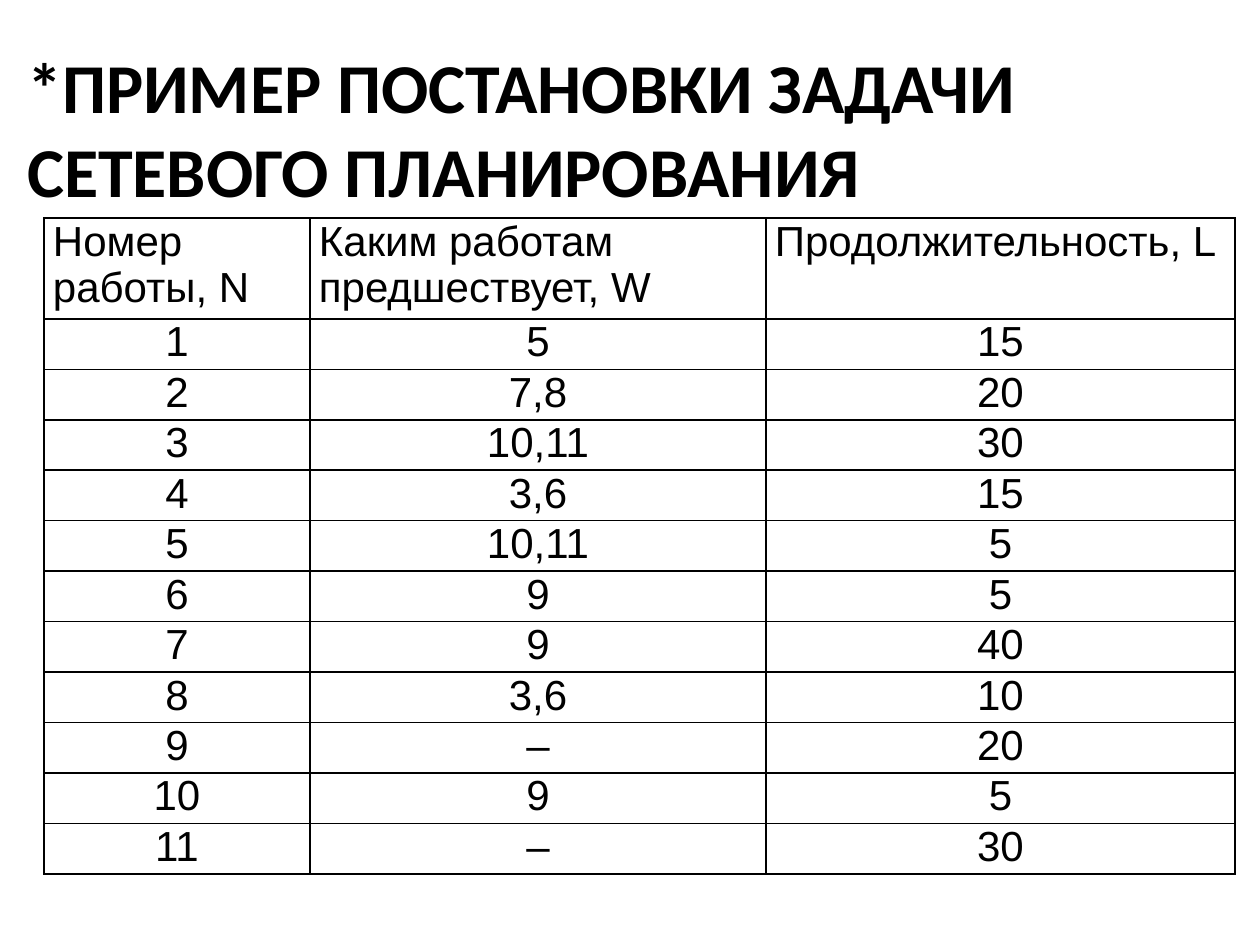
from pptx import Presentation
from pptx.dml.color import RGBColor
from pptx.enum.text import MSO_AUTO_SIZE, PP_ALIGN
from pptx.oxml import parse_xml
from pptx.oxml.ns import nsdecls
from pptx.util import Pt

SCALE = 914400 // 126
INK = "000000"
PAPER = "FFFFFF"
TITLE = "*ПРИМЕР ПОСТАНОВКИ ЗАДАЧИ СЕТЕВОГО ПЛАНИРОВАНИЯ"
HEADS = ["Номер работы, N", "Каким работам предшествует, W", "Продолжительность, L"]
TASKS = [
    ("5", 15), ("7,8", 20), ("10,11", 30), ("3,6", 15), ("10,11", 5), ("9", 5),
    ("9", 40), ("3,6", 10), ("–", 20), ("9", 5), ("–", 30),
]
WIDTHS = [266, 456, 469]


def px(count):
    """Turn pixels into EMU."""
    return count * SCALE


def color(code):
    """Turn a hex string into a colour."""
    return RGBColor.from_string(code)


def style(para, name, size, bold=False):
    """Set the font of a paragraph."""
    font = para.font
    font.name, font.size, font.bold = name, Pt(size), bold
    font.color.rgb = color(INK)


def add_title(slide):
    """Add the heading."""
    box = slide.shapes.add_textbox(px(15), px(37), px(1221), px(183))
    frame = box.text_frame
    frame.word_wrap = True
    frame.auto_size = MSO_AUTO_SIZE.SHAPE_TO_FIT_TEXT
    frame.text = TITLE
    style(frame.paragraphs[0], "Calibri", 40, True)


def add_edges(cell):
    """Draw the four borders of a cell."""
    props = cell._tc.get_or_add_tcPr()
    for spot, side in enumerate("LRTB"):
        props.insert(spot, parse_xml(
            f'<a:ln{side} {nsdecls("a")} w="{Pt(1)}"><a:solidFill>'
            f'<a:srgbClr val="{INK}"/></a:solidFill></a:ln{side}>'))


def fill_cell(cell, text, align):
    """Write and style one cell."""
    cell.text = text
    cell.margin_left = cell.margin_right = px(9)
    cell.margin_top = cell.margin_bottom = 0
    cell.fill.solid()
    cell.fill.fore_color.rgb = color(PAPER)
    para = cell.text_frame.paragraphs[0]
    para.alignment = align
    style(para, "Arial", 24)
    add_edges(cell)


def add_grid(slide):
    """Add the table of tasks, with a header two rows high."""
    rows = [HEADS] + [(str(num), after, str(time))
                      for num, (after, time) in enumerate(TASKS, 1)]
    high = px(655)
    table = slide.shapes.add_table(
        len(rows), len(WIDTHS), px(44), px(218), px(sum(WIDTHS)), high).table
    for col, width in zip(table.columns, WIDTHS):
        col.width = px(width)
    unit = high // (len(rows) + 1)
    for r, row in enumerate(rows):
        table.rows[r].height = unit if r else 2 * unit
        align = PP_ALIGN.CENTER if r else PP_ALIGN.LEFT
        for c, text in enumerate(row):
            fill_cell(table.cell(r, c), text, align)


def main():
    """Build and save the slide."""
    deck = Presentation()
    deck.slide_width, deck.slide_height = px(1260), px(945)
    slide = deck.slides.add_slide(deck.slide_layouts[6])
    add_title(slide)
    add_grid(slide)
    deck.save("out.pptx")


if __name__ == "__main__":
    main()
